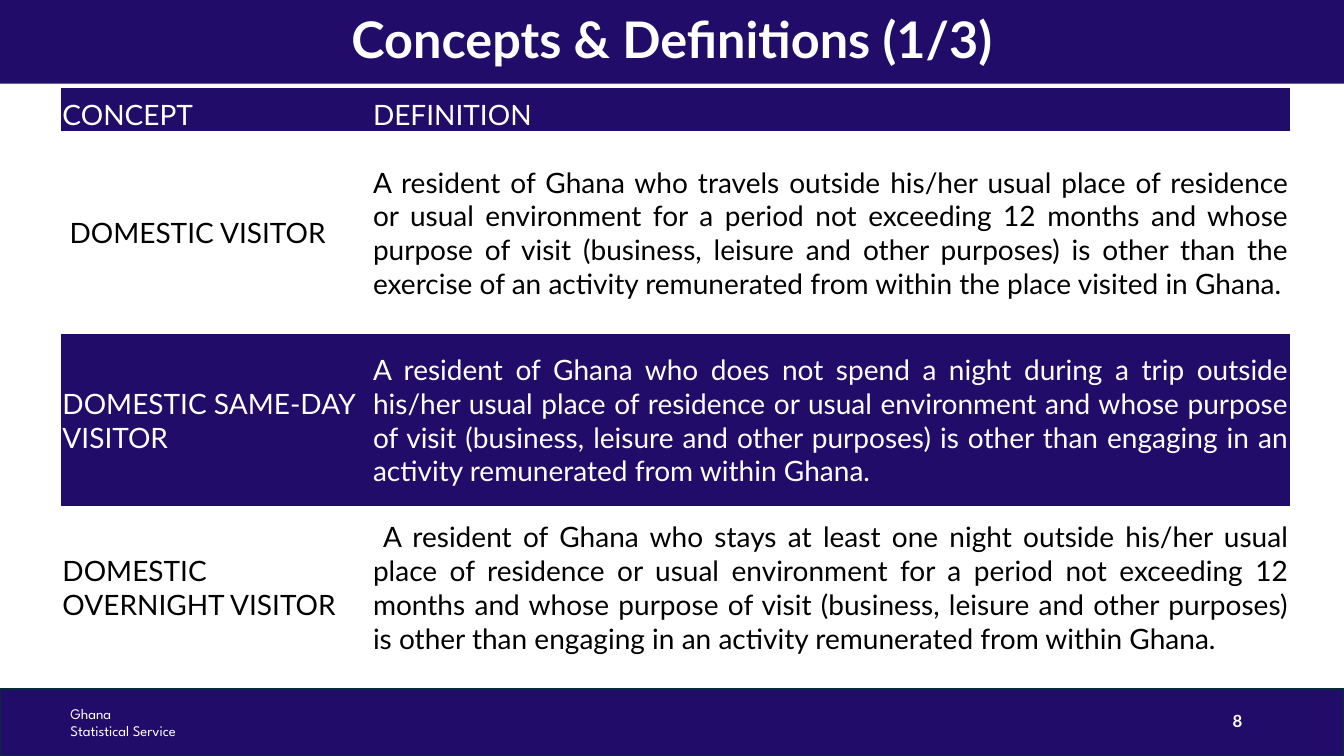
from pptx import Presentation, util as u
from pptx.dml.color import RGBColor
from pptx.enum import shapes, text

COLORS = {"navy": "210D69", "edge": "092A39", "white": "FFFFFF", "black": "000000"}
TITLE = "Concepts & Definitions (1/3)"
AGENCY = ["Ghana", "Statistical Service"]
PAGE = "8"
ROWS = [
    ("CONCEPT", "DEFINITION"),
    ("DOMESTIC VISITOR",
     "A resident of Ghana who travels outside his/her usual place of residence or usual "
     "environment for a period not exceeding 12 months and whose purpose of visit (business, "
     "leisure and other purposes) is other than the exercise of an activity remunerated from "
     "within the place visited in Ghana."),
    ("DOMESTIC SAME-DAY VISITOR",
     "A resident of Ghana who does not spend a night during a trip outside his/her usual place "
     "of residence or usual environment and whose purpose of visit (business, leisure and other "
     "purposes) is other than engaging in an activity remunerated from within Ghana."),
    ("DOMESTIC OVERNIGHT VISITOR",
     "A resident of Ghana who stays at least one night outside his/her usual place of residence "
     "or usual environment for a period not exceeding 12 months and whose purpose of visit "
     "(business, leisure and other purposes) is other than engaging in an activity remunerated "
     "from within Ghana."),
]
FIRST_LINE_INDENTS = {(1, 0): 0.07, (3, 1): 0.1}  # (row, column): inches
COLUMN_WIDTHS = [3.08, 9.1]
ROW_HEIGHTS = [0.43, 2.01, 1.71, 1.61]
WIDTH, HEIGHT = 13.33, 7.5
TITLE_HEIGHT, FOOTER_HEIGHT = 0.83, 0.66
TABLE_LEFT, TABLE_TOP = 0.61, 0.87
PLAIN_TABLE_STYLE = "{2D5ABB26-0587-4C30-8999-92F81FD0307C}"


def color(name):
    return RGBColor.from_string(COLORS[name])


def inches(*lengths):
    return [u.Inches(length) for length in lengths]


def write(paragraph, words, size, ink="white", font="Lato", bold=False):
    run = paragraph.add_run()
    run.text = words
    run.font.name, run.font.size, run.font.bold = font, u.Pt(size), bold
    run.font.color.rgb = color(ink)


def add_band(slide, top, height):
    """Add a navy bar across the whole slide."""
    band = slide.shapes.add_shape(shapes.MSO_SHAPE.RECTANGLE, *inches(0, top, WIDTH, height))
    band.shadow.inherit = False
    band.fill.solid()
    band.fill.fore_color.rgb = color("navy")
    band.line.fill.background()
    return band


def add_footer(slide):
    band = add_band(slide, HEIGHT - FOOTER_HEIGHT, FOOTER_HEIGHT)
    band.line.color.rgb = color("edge")
    band.line.width = u.Pt(1.5)

    agency = slide.shapes.add_textbox(*inches(0.6, 6.94, 2.24, 0.47)).text_frame
    agency.word_wrap = True
    for index, line in enumerate(AGENCY):
        paragraph = agency.add_paragraph() if index else agency.paragraphs[0]
        write(paragraph, line, 10.5, font="League Spartan")


def add_title(slide):
    frame = add_band(slide, 0, TITLE_HEIGHT).text_frame
    frame.word_wrap = True
    frame.vertical_anchor = text.MSO_ANCHOR.MIDDLE
    paragraph = frame.paragraphs[0]
    paragraph.alignment = text.PP_ALIGN.CENTER
    paragraph.line_spacing = 0.9
    write(paragraph, TITLE, 36, bold=True)


def fill_cell(cell, words, row, column):
    dark = row % 2 == 0
    if dark:
        cell.fill.solid()
        cell.fill.fore_color.rgb = color("navy")
    else:
        cell.fill.background()
    cell.margin_left = cell.margin_right = cell.margin_top = u.Inches(0.01)
    cell.margin_bottom = 0
    cell.vertical_anchor = text.MSO_ANCHOR.MIDDLE if row else text.MSO_ANCHOR.BOTTOM
    paragraph = cell.text_frame.paragraphs[0]
    if row and column:
        paragraph.alignment = text.PP_ALIGN.JUSTIFY
    indent = FIRST_LINE_INDENTS.get((row, column))
    if indent:
        properties = paragraph._p.get_or_add_pPr()
        properties.set("marL", "0")
        properties.set("indent", str(u.Inches(indent)))
    write(paragraph, words, 20, "white" if dark else "black")


def add_definitions(slide):
    frame = slide.shapes.add_table(
        len(ROWS), len(COLUMN_WIDTHS),
        *inches(TABLE_LEFT, TABLE_TOP, sum(COLUMN_WIDTHS), sum(ROW_HEIGHTS)))
    table = frame.table
    table.first_row = table.horz_banding = False
    table._tbl.tblPr.find("{*}tableStyleId").text = PLAIN_TABLE_STYLE
    for column, width in zip(table.columns, COLUMN_WIDTHS):
        column.width = u.Inches(width)
    for row, height in zip(table.rows, ROW_HEIGHTS):
        row.height = u.Inches(height)
    for row, entries in enumerate(ROWS):
        for column, words in enumerate(entries):
            fill_cell(table.cell(row, column), words, row, column)


def add_page_number(slide):
    frame = slide.shapes.add_textbox(*inches(11.9, 6.95, 0.52, 0.4)).text_frame
    frame.word_wrap = True
    frame.vertical_anchor = text.MSO_ANCHOR.MIDDLE
    paragraph = frame.paragraphs[0]
    paragraph.alignment = text.PP_ALIGN.RIGHT
    write(paragraph, PAGE, 12, bold=True)


def main():
    presentation = Presentation()
    presentation.slide_width, presentation.slide_height = inches(WIDTH, HEIGHT)
    slide = presentation.slides.add_slide(presentation.slide_layouts[6])
    add_footer(slide)
    add_title(slide)
    add_definitions(slide)
    add_page_number(slide)
    presentation.save("out.pptx")


if __name__ == "__main__":
    main()
